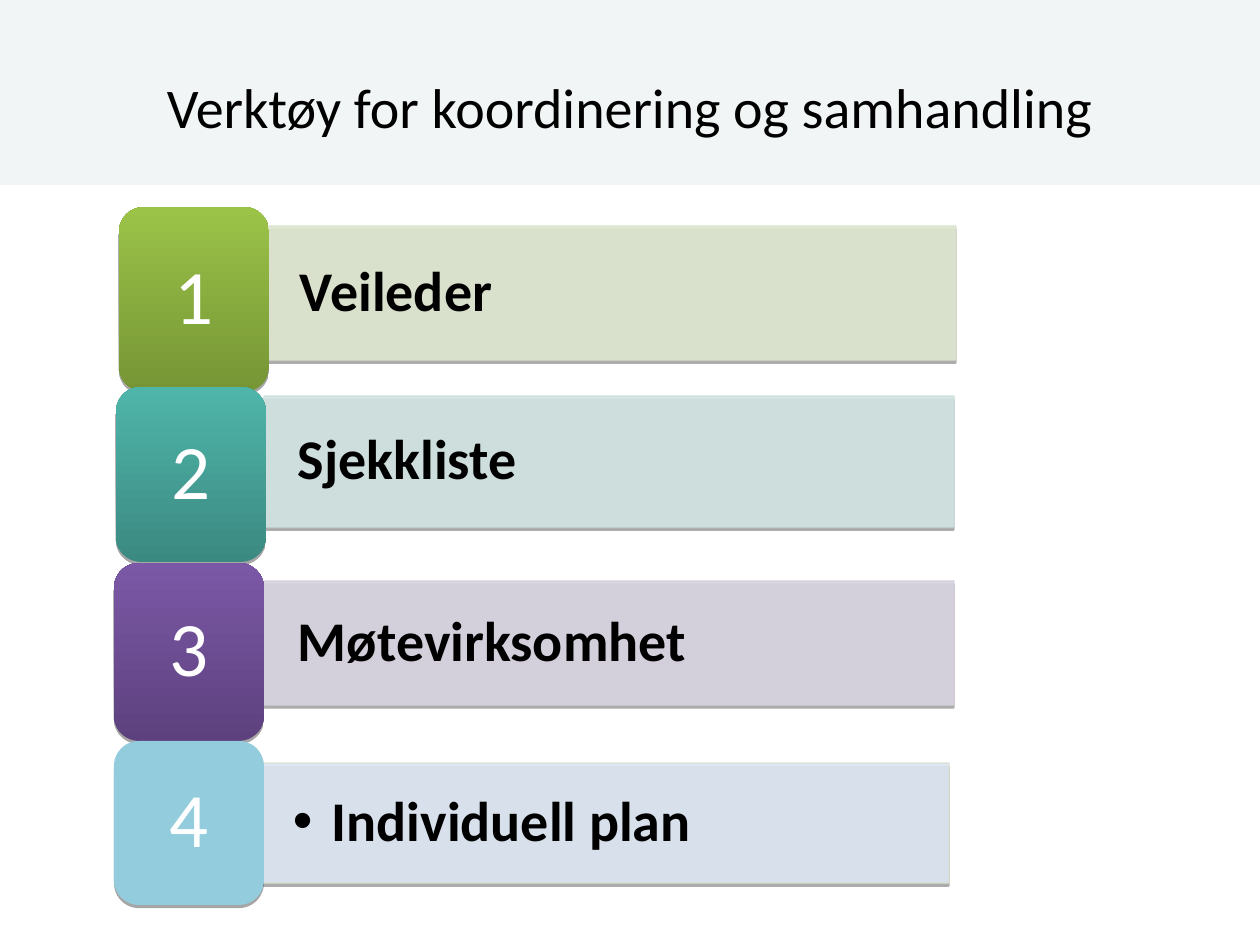
"""Build a slide listing four numbered tools for coordination."""
from dataclasses import dataclass
from typing import Optional

from lxml.etree import SubElement
from pptx import Presentation
from pptx.dml.color import RGBColor
from pptx.enum.shapes import MSO_SHAPE
from pptx.enum.text import MSO_ANCHOR, PP_ALIGN
from pptx.oxml.ns import qn
from pptx.util import Pt

EMU_PER_PX = 914400 / 126


@dataclass(frozen=True)
class Theme:
    font: str = "Calibri"
    heading_size: int = 32
    number_size: int = 44
    text: str = "000000"
    number: str = "FFFFFF"
    band: str = "F1F5F5"
    shadow: str = "000000"


@dataclass(frozen=True)
class Box:
    left: int
    top: int
    width: int
    height: int

    def emu(self) -> tuple:
        return tuple(px(side) for side in (self.left, self.top, self.width, self.height))


@dataclass(frozen=True)
class Tool:
    label: str
    bar: Box
    bar_fill: str
    bar_line: str
    tile: Box
    tile_top: str
    tile_bottom: Optional[str] = None
    bullet: bool = False


THEME = Theme()
BAR_WIDTH, TILE_WIDTH = 690, 150
TOOLS = (
    Tool("Veileder", Box(266, 226, BAR_WIDTH, 134), "DEE7D1", "D9E2CC",
         Box(119, 207, TILE_WIDTH, 185), "9BC348", "769535"),
    Tool("Sjekkliste", Box(264, 396, BAR_WIDTH, 131), "D2E4E2", "CDDFDD",
         Box(116, 387, TILE_WIDTH, 175), "4FB5AA", "3B8A81"),
    Tool("Møtevirksomhet", Box(264, 581, BAR_WIDTH, 124), "D8D3E0", "D3CEDB",
         Box(114, 563, TILE_WIDTH, 178), "7B58A6", "5D417E"),
    Tool("Individuell plan", Box(259, 763, BAR_WIDTH, 120), "DCE6F2", "D9E2CC",
         Box(114, 741, TILE_WIDTH, 164), "93CDDD", bullet=True),
)


def px(length: int) -> int:
    return round(length * EMU_PER_PX)


def rgb(value: str) -> RGBColor:
    return RGBColor.from_string(value)


def add_box(slide, kind, box: Box, fill: str, line: Optional[str] = None):
    shape = slide.shapes.add_shape(kind, *box.emu())
    shape.shadow.inherit = False
    shape.fill.solid()
    shape.fill.fore_color.rgb = rgb(fill)
    if line:
        shape.line.color.rgb = rgb(line)
        shape.line.width = Pt(0.75)
    else:
        shape.line.fill.background()
    return shape


def set_gradient(shape, top: str, bottom: str) -> None:
    shape.fill.gradient()
    shape.fill.gradient_angle = 90
    for stop, color, position in zip(shape.fill.gradient_stops, (bottom, top), (0, 1)):
        stop.color.rgb = rgb(color)
        stop.position = position


def set_opacity(shape, percent: int) -> None:
    for color in shape.element.spPr.iter(qn("a:srgbClr")):
        SubElement(color, qn("a:alpha"), val=str(percent * 1000))


def add_shadow(shape) -> None:
    effects = shape.element.spPr.find(qn("a:effectLst"))
    shadow = SubElement(effects, qn("a:outerShdw"), blurRad="0", dist=str(Pt(1.8)),
                        dir="5400000", rotWithShape="0")
    color = SubElement(shadow, qn("a:srgbClr"), val=THEME.shadow)
    SubElement(color, qn("a:alpha"), val="35000")


def write(shape, text: str, *, size: int, color: str, bold: bool = False,
          align=PP_ALIGN.CENTER, inset: tuple = (13, 6), after: int = 0,
          spacing: float = 1.0, bullet: bool = False) -> None:
    frame = shape.text_frame
    frame.word_wrap = True
    frame.vertical_anchor = MSO_ANCHOR.MIDDLE
    frame.margin_left = frame.margin_right = px(inset[0])
    frame.margin_top = frame.margin_bottom = px(inset[1])
    para = frame.paragraphs[0]
    if bullet:
        properties = para._p.get_or_add_pPr()
        properties.set("marL", str(px(39)))
        properties.set("indent", str(px(-39)))
        SubElement(properties, qn("a:buFont"), typeface="Arial")
        SubElement(properties, qn("a:buChar"), char="•")
    para.alignment = align
    para.line_spacing = spacing
    para.space_after = Pt(after)
    span = para.add_run()
    span.text = text
    span.font.name = THEME.font
    span.font.size = Pt(size)
    span.font.bold = bold
    span.font.color.rgb = rgb(color)


def add_tool(slide, number: int, tool: Tool) -> None:
    bar = add_box(slide, MSO_SHAPE.RECTANGLE, tool.bar, tool.bar_fill, tool.bar_line)
    set_opacity(bar, 90)
    add_shadow(bar)
    write(bar, tool.label, size=THEME.heading_size, color=THEME.text, bold=True,
          align=PP_ALIGN.LEFT, inset=(34, 18), after=6, spacing=0.9, bullet=tool.bullet)
    tile = add_box(slide, MSO_SHAPE.ROUNDED_RECTANGLE, tool.tile, tool.tile_top)
    if tool.tile_bottom:
        set_gradient(tile, tool.tile_top, tool.tile_bottom)
    add_shadow(tile)
    write(tile, str(number), size=THEME.number_size, color=THEME.number,
          inset=(30, 19), after=18, spacing=0.9)


def main() -> None:
    deck = Presentation()
    deck.slide_width, deck.slide_height = px(1260), px(945)
    page = deck.slides.add_slide(deck.slide_layouts[6])
    add_box(page, MSO_SHAPE.RECTANGLE, Box(0, 0, 1260, 185), THEME.band)
    title = page.shapes.add_textbox(*Box(63, 38, 1134, 137).emu())
    write(title, "Verktøy for koordinering og samhandling",
          size=THEME.heading_size, color=THEME.text)
    for number, tool in enumerate(TOOLS, start=1):
        add_tool(page, number, tool)
    deck.save("out.pptx")


if __name__ == "__main__":
    main()
